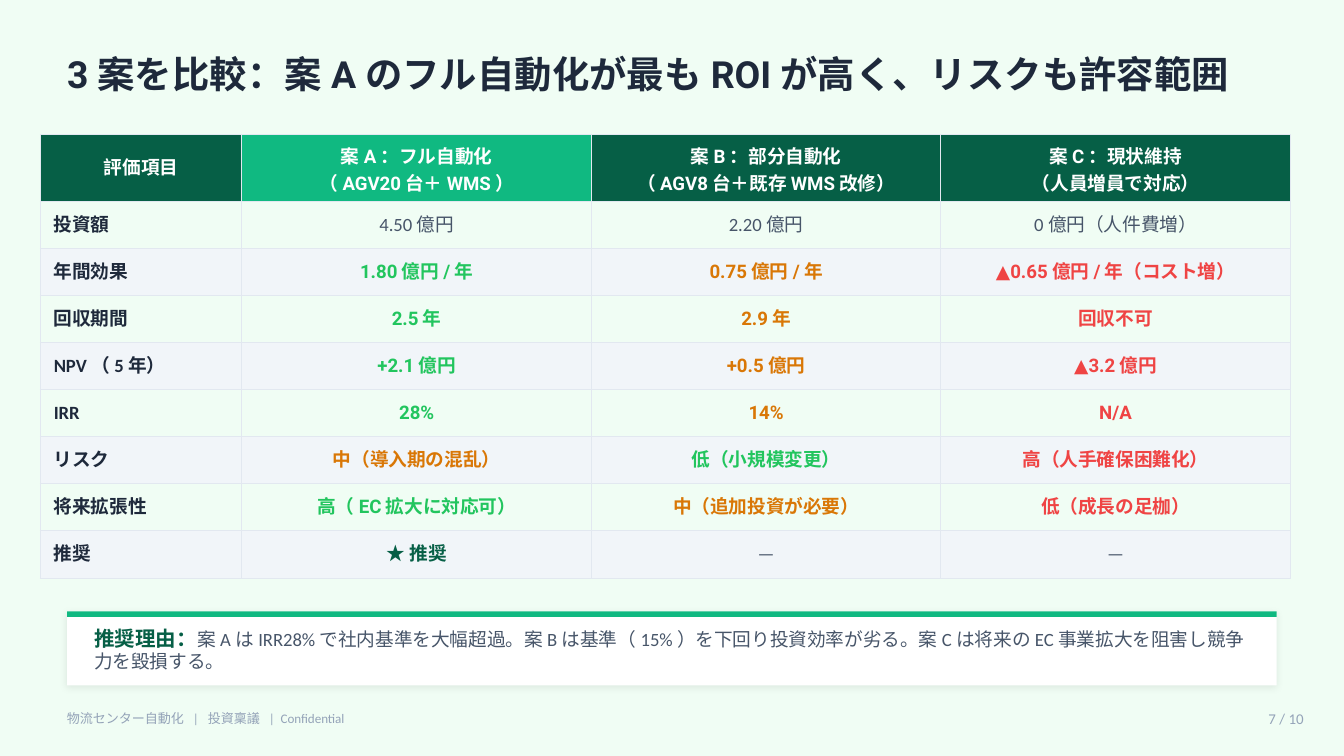
from lxml import etree
from pptx import Presentation
from pptx.dml.color import RGBColor
from pptx.enum.shapes import MSO_SHAPE
from pptx.enum.text import MSO_ANCHOR, MSO_AUTO_SIZE, PP_ALIGN
from pptx.oxml import parse_xml
from pptx.oxml.ns import nsdecls, qn
from pptx.util import Inches, Pt

MINT = RGBColor(0xF0, 0xFD, 0xF4)
WHITE = RGBColor(0xFF, 0xFF, 0xFF)
DARK = RGBColor(0x06, 0x5F, 0x46)
ACCENT = RGBColor(0x10, 0xB9, 0x81)
INK = RGBColor(0x1E, 0x29, 0x3B)
BODY = RGBColor(0x47, 0x55, 0x69)
MUTED = RGBColor(0x94, 0xA3, 0xB8)
STRIPE = RGBColor(0xF1, 0xF5, 0xF9)
BORDER = RGBColor(0xE2, 0xE8, 0xF0)
GOOD = RGBColor(0x22, 0xC5, 0x5E)
FAIR = RGBColor(0xD9, 0x77, 0x06)
BAD = RGBColor(0xEF, 0x44, 0x44)

HEAD_FONT = "Roboto"
BODY_FONT = "Calibri"

HEADERS = [
    ("評価項目",),
    ("案A：フル自動化", "（AGV20台＋WMS）"),
    ("案B：部分自動化", "（AGV8台＋既存WMS改修）"),
    ("案C：現状維持", "（人員増員で対応）"),
]
HEADER_FILLS = [DARK, ACCENT, DARK, DARK]

ROWS = [
    ("投資額", ("4.50億円", BODY), ("2.20億円", BODY), ("0億円（人件費増）", BODY)),
    ("年間効果", ("1.80億円/年", GOOD), ("0.75億円/年", FAIR), ("▲0.65億円/年（コスト増）", BAD)),
    ("回収期間", ("2.5年", GOOD), ("2.9年", FAIR), ("回収不可", BAD)),
    ("NPV（5年）", ("+2.1億円", GOOD), ("+0.5億円", FAIR), ("▲3.2億円", BAD)),
    ("IRR", ("28%", GOOD), ("14%", FAIR), ("N/A", BAD)),
    ("リスク", ("中（導入期の混乱）", FAIR), ("低（小規模変更）", GOOD), ("高（人手確保困難化）", BAD)),
    ("将来拡張性", ("高（EC拡大に対応可）", GOOD), ("中（追加投資が必要）", FAIR), ("低（成長の足枷）", BAD)),
    ("推奨", ("★ 推奨", DARK), ("—", BODY), ("—", BODY)),
]


def add_run(p, text, size, font, color, bold=False):
    r = p.add_run()
    r.text = text
    r.font.size = Pt(size)
    r.font.name = font
    r.font.bold = bold
    r.font.color.rgb = color
    etree.SubElement(r.font._element, qn("a:ea")).set("typeface", font)


def prepare_frame(tf, inset=None):
    tf.word_wrap = True
    tf.auto_size = MSO_AUTO_SIZE.NONE
    tf.vertical_anchor = MSO_ANCHOR.MIDDLE
    if inset is not None:
        tf.margin_left = tf.margin_right = tf.margin_top = tf.margin_bottom = inset
    return tf.paragraphs[0]


def add_text(slide, x, y, w, h, inset=None):
    sp = slide.shapes.add_textbox(Inches(x), Inches(y), Inches(w), Inches(h))
    return prepare_frame(sp.text_frame, inset)


def add_bar(slide, x, y, w, h, color):
    sp = slide.shapes.add_shape(MSO_SHAPE.RECTANGLE, Inches(x), Inches(y), Inches(w), Inches(h))
    sp.shadow.inherit = False
    sp.fill.solid()
    sp.fill.fore_color.rgb = color
    sp.line.fill.background()
    return sp


def add_soft_shadow(sp):
    effects = sp._element.spPr.find(qn("a:effectLst"))
    effects.append(parse_xml(
        f'<a:outerShdw {nsdecls("a")} blurRad="{Pt(4)}" dist="{Pt(1)}" dir="{135 * 60000}" '
        'algn="bl" rotWithShape="0"><a:srgbClr val="000000"><a:alpha val="8000"/>'
        '</a:srgbClr></a:outerShdw>'))


def set_borders(cell):
    tc_pr = cell._tc.get_or_add_tcPr()
    for i, side in enumerate(("lnL", "lnR", "lnT", "lnB")):
        tc_pr.insert(i, parse_xml(
            f'<a:{side} {nsdecls("a")} w="{Pt(0.5)}"><a:solidFill>'
            f'<a:srgbClr val="{BORDER}"/></a:solidFill></a:{side}>'))


def fill_cell(cell, lines, font, color, bold, align, fill):
    cell.vertical_anchor = MSO_ANCHOR.MIDDLE
    if fill is None:
        cell.fill.background()
    else:
        cell.fill.solid()
        cell.fill.fore_color.rgb = fill
    set_borders(cell)
    tf = cell.text_frame
    for i, line in enumerate(lines):
        p = tf.add_paragraph() if i else tf.paragraphs[0]
        p.alignment = align
        if len(lines) > 1:
            p.line_spacing = Pt(14.4)
        add_run(p, line, 10, font, color, bold)


def add_title(slide, x, y, w, h):
    sp = slide.shapes.title
    sp.left, sp.top, sp.width, sp.height = Inches(x), Inches(y), Inches(w), Inches(h)
    p = prepare_frame(sp.text_frame, 0)
    p.alignment = PP_ALIGN.LEFT
    add_run(p, "3案を比較：案Aのフル自動化が最もROIが高く、リスクも許容範囲", 20, HEAD_FONT, INK, True)


def add_comparison(slide, x, y, label_w, option_w, head_h, row_h):
    widths = [label_w] + [option_w] * 3
    heights = [head_h] + [row_h] * len(ROWS)
    table = slide.shapes.add_table(
        len(heights), len(widths), Inches(x), Inches(y),
        Inches(sum(widths)), Inches(sum(heights))).table
    for column, width in zip(table.columns, widths):
        column.width = Inches(width)
    for row, height in zip(table.rows, heights):
        row.height = Inches(height)

    for c, (lines, fill) in enumerate(zip(HEADERS, HEADER_FILLS)):
        fill_cell(table.cell(0, c), lines, HEAD_FONT, WHITE, True, PP_ALIGN.CENTER, fill)
    for r, (label, *options) in enumerate(ROWS, 1):
        fill = None if r % 2 else STRIPE
        fill_cell(table.cell(r, 0), [label], BODY_FONT, INK, True, PP_ALIGN.LEFT, fill)
        for c, (text, color) in enumerate(options, 1):
            rated = color != BODY
            font = HEAD_FONT if rated else BODY_FONT
            fill_cell(table.cell(r, c), [text], font, color, rated, PP_ALIGN.CENTER, fill)


def add_reason(slide, x, y, w, h):
    add_soft_shadow(add_bar(slide, x, y, w, h, WHITE))
    add_bar(slide, x, y, w, 0.04, ACCENT)
    p = add_text(slide, x + 0.2, y + 0.08, w - 0.4, h - 0.15, 0)
    add_run(p, "推奨理由：", 11, HEAD_FONT, DARK, True)
    add_run(p, "案AはIRR28%で社内基準を大幅超過。案Bは基準（15%）を下回り投資効率が劣る。"
               "案Cは将来のEC事業拡大を阻害し競争力を毀損する。", 10, BODY_FONT, BODY)


def add_footer(slide, x, y, w, h):
    p = add_text(slide, x + w - 0.7, y, 0.7, h)
    p.alignment = PP_ALIGN.RIGHT
    add_run(p, "7 / 10", 8, BODY_FONT, MUTED)
    p = add_text(slide, x, y, 5, h)
    add_run(p, "物流センター自動化  |  投資稟議  |  Confidential", 7, BODY_FONT, MUTED)


def main():
    prs = Presentation()
    prs.slide_width = Inches(10)
    prs.slide_height = Inches(10 * 9 / 16)
    slide = prs.slides.add_slide(prs.slide_layouts[5])
    slide.background.fill.solid()
    slide.background.fill.fore_color.rgb = MINT
    add_title(slide, 0.5, 0.3, 9, 0.5)
    add_comparison(slide, 0.3, 1, 1.5, 2.6, 0.45, 0.35)
    add_reason(slide, 0.5, 4.55, 9, 0.55)
    add_footer(slide, 0.4, 5.22, 9.4, 0.25)
    prs.save("out.pptx")


if __name__ == "__main__":
    main()
